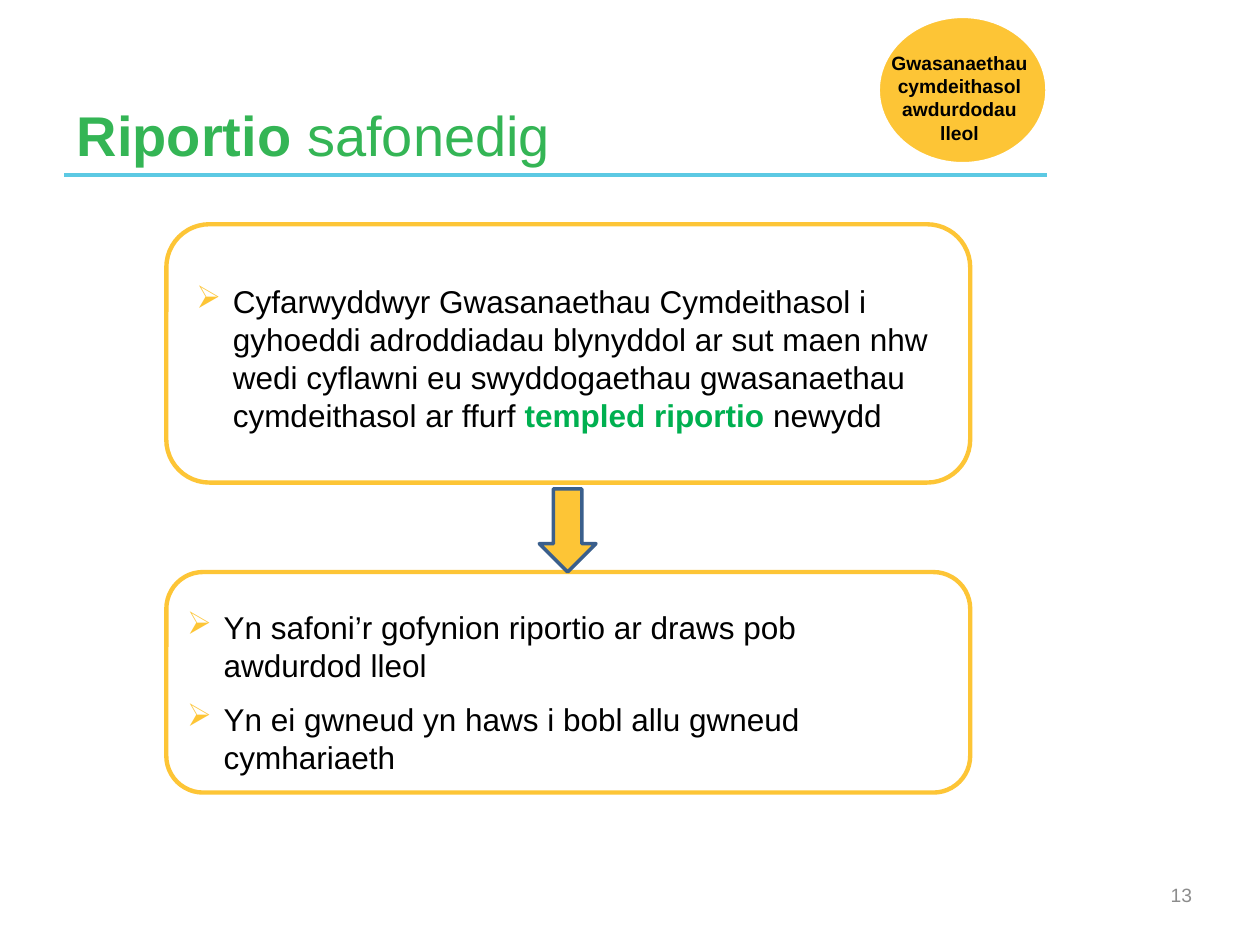
from pptx import Presentation
from pptx.dml.color import RGBColor
from pptx.enum.shapes import MSO_CONNECTOR, MSO_SHAPE
from pptx.enum.text import MSO_ANCHOR, PP_ALIGN
from pptx.oxml.ns import qn
from pptx.util import Inches, Pt
from lxml.etree import SubElement

COLORS = {
    "title": "34B555", "rule": "5CC9E3", "amber": "FDC536", "text": "000000",
    "accent": "00B050", "arrow_edge": "3A5F8C", "number": "8C8C8C", "white": "FFFFFF",
}


def rgb(name):
    return RGBColor.from_string(COLORS[name])


def inches(box):
    return [Inches(v) for v in box]


def add_run(p, text, size, color="text", bold=False):
    r = p.add_run()
    r.text = text
    r.font.name = "Arial"
    r.font.size = Pt(size)
    r.font.bold = bold
    r.font.color.rgb = rgb(color)


def add_shape(slide, kind, box, line, width, fill=None):
    sp = slide.shapes.add_shape(kind, *inches(box))
    sp.shadow.inherit = False
    if fill:
        sp.fill.solid()
        sp.fill.fore_color.rgb = rgb(fill)
    else:
        sp.fill.background()
    sp.line.color.rgb = rgb(line)
    sp.line.width = Pt(width)
    return sp


def add_text_box(slide, box, wrap=True):
    tf = slide.shapes.add_textbox(*inches(box)).text_frame
    tf.word_wrap = wrap
    return tf


def next_paragraph(tf, first):
    return tf.paragraphs[0] if first else tf.add_paragraph()


def add_bullet(tf, first=True):
    p = next_paragraph(tf, first)
    pPr = p._p.get_or_add_pPr()
    pPr.set("marL", str(Inches(0.29)))
    pPr.set("indent", str(-Inches(0.29)))
    color = SubElement(pPr, qn("a:buClr"))
    SubElement(color, qn("a:srgbClr")).set("val", COLORS["amber"])
    SubElement(pPr, qn("a:buChar")).set("char", "➢")
    p.alignment = PP_ALIGN.LEFT
    p.space_before = Pt(0 if first else 3.6)
    p.space_after = Pt(6)
    return p


def add_rule(slide, x1, x2, y):
    line = slide.shapes.add_connector(
        MSO_CONNECTOR.STRAIGHT, *inches((x1, y, x2, y)))
    line.line.color.rgb = rgb("rule")
    line.line.width = Pt(2)
    SubElement(line._element.spPr, qn("a:effectLst"))


def add_title(slide):
    title = slide.shapes.title
    title.left, title.top, title.width, title.height = inches((0.51, 0.29, 7.8, 1.09))
    tf = title.text_frame
    tf.vertical_anchor = MSO_ANCHOR.BOTTOM
    p = tf.paragraphs[0]
    p.alignment = PP_ALIGN.LEFT
    add_run(p, "Riportio ", 32, "title", True)
    add_run(p, "safonedig", 32, "title")


def add_reporting_box(slide):
    add_shape(slide, MSO_SHAPE.ROUNDED_RECTANGLE, (1.32, 1.78, 6.38, 2.05), "amber", 2.5)
    p = add_bullet(add_text_box(slide, (1.46, 2.19, 6.06, 1.31)))
    add_run(p, "Cyfarwyddwyr Gwasanaethau Cymdeithasol i gyhoeddi adroddiadau "
               "blynyddol ar sut maen nhw wedi cyflawni eu swyddogaethau "
               "gwasanaethau cymdeithasol ar ffurf ", 18)
    add_run(p, "templed riportio ", 18, "accent", True)
    add_run(p, "newydd", 18)


def add_benefits_box(slide):
    sp = add_shape(slide, MSO_SHAPE.ROUNDED_RECTANGLE, (1.32, 4.54, 6.38, 1.75), "amber", 2.5)
    tf = sp.text_frame
    tf.word_wrap = True
    tf.vertical_anchor = MSO_ANCHOR.TOP
    tf.margin_left = tf.margin_right = tf.margin_bottom = Inches(0.08)
    tf.margin_top = Inches(0.2)
    p = add_bullet(tf)
    add_run(p, "Yn safoni’r gofynion riportio ar draws pob ", 18)
    p.add_line_break()
    add_run(p, "awdurdod lleol", 18)
    p = add_bullet(tf, first=False)
    add_run(p, "Yn ei gwneud yn haws i bobl allu gwneud cymhariaeth", 18)


def add_badge(slide):
    add_shape(slide, MSO_SHAPE.OVAL, (6.97, 0.13, 1.34, 1.17), "white", 2, "amber")
    tf = add_text_box(slide, (6.97, 0.36, 1.29, 1.04), wrap=False)
    words = ("Gwasanaethau", "cymdeithasol", "awdurdodau", "lleol")
    for i, word in enumerate(words):
        p = next_paragraph(tf, i == 0)
        p.alignment = PP_ALIGN.CENTER
        add_run(p, word, 11, bold=True)


def add_slide_number(slide):
    tf = add_text_box(slide, (7.23, 6.9, 2.33, 0.4))
    tf.vertical_anchor = MSO_ANCHOR.MIDDLE
    p = tf.paragraphs[0]
    p.alignment = PP_ALIGN.RIGHT
    add_run(p, "13", 11, "number")


def main():
    prs = Presentation()
    prs.slide_width, prs.slide_height = Inches(10), Inches(7.5)
    slide = prs.slides.add_slide(prs.slide_layouts[5])

    # Heading and page furniture
    add_rule(slide, 0.51, 8.31, 1.39)
    add_slide_number(slide)
    add_title(slide)

    # Two boxes joined by a block arrow
    add_reporting_box(slide)
    add_benefits_box(slide)
    add_shape(slide, MSO_SHAPE.DOWN_ARROW, (4.28, 3.88, 0.45, 0.66), "arrow_edge", 2, "amber")

    # Badge in the corner
    add_badge(slide)
    prs.save("out.pptx")


if __name__ == "__main__":
    main()
